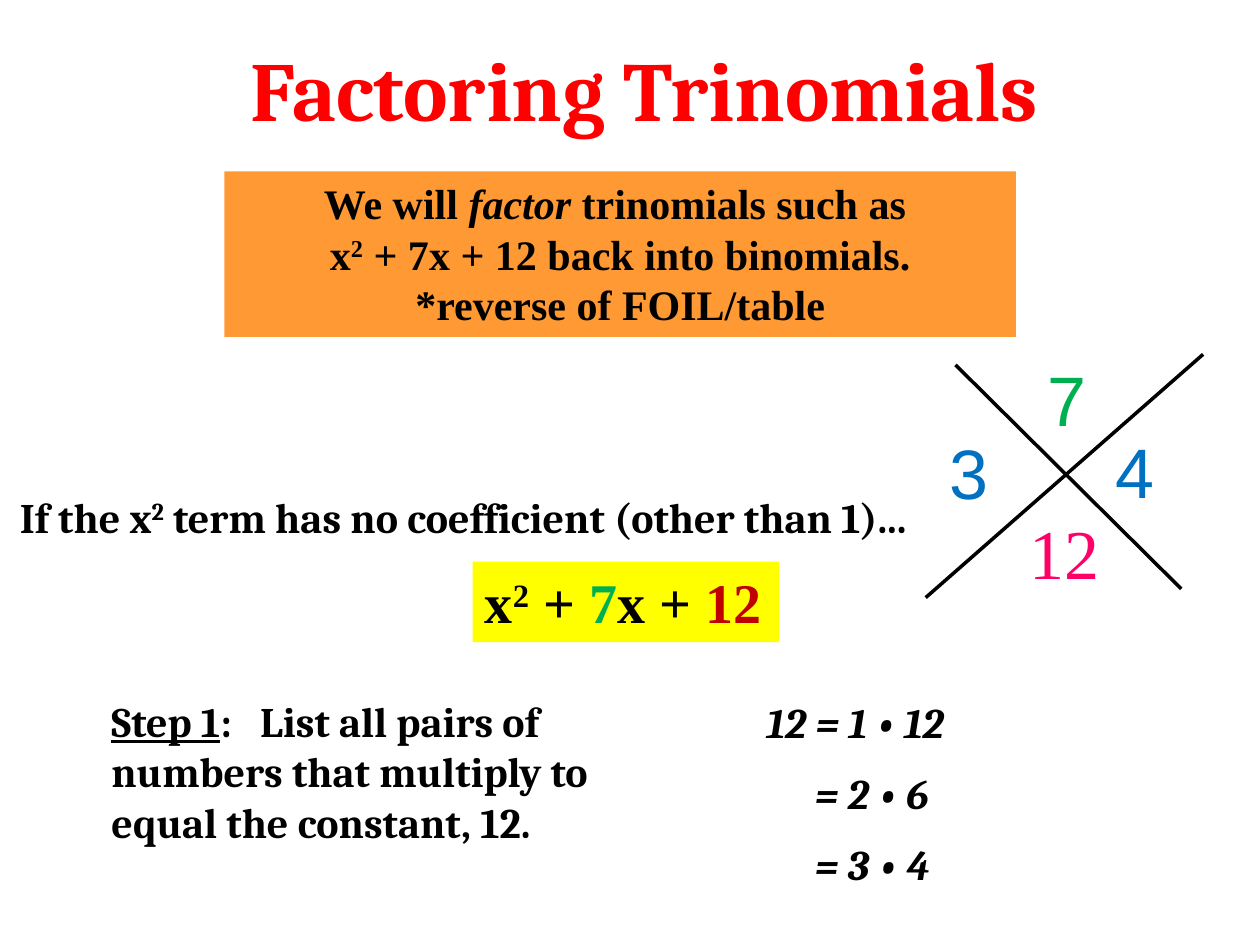
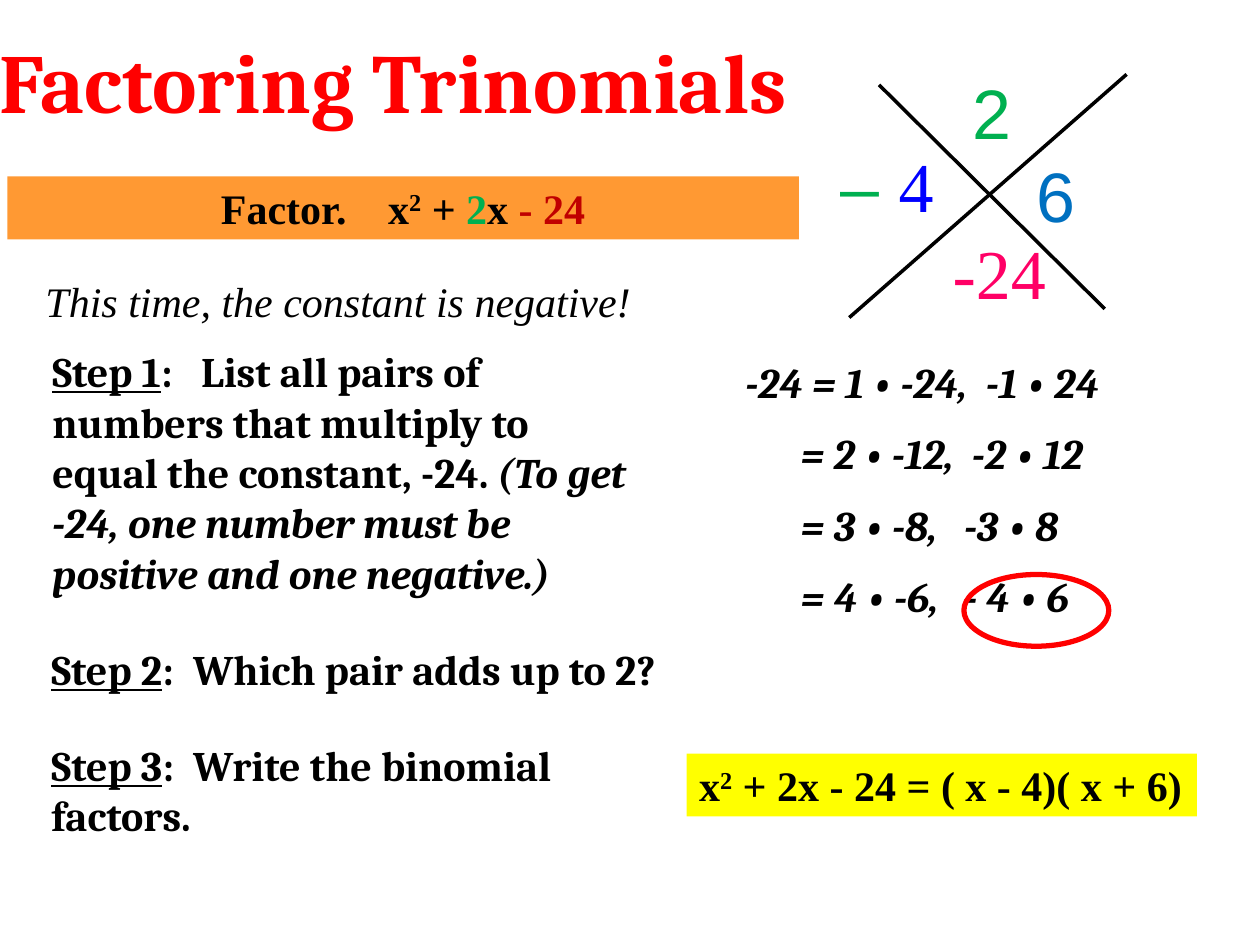
from lxml import etree
from pptx import Presentation
from pptx.dml.color import RGBColor
from pptx.enum.shapes import MSO_CONNECTOR, MSO_SHAPE
from pptx.enum.text import MSO_ANCHOR, MSO_AUTO_SIZE, PP_ALIGN
from pptx.oxml.ns import qn
from pptx.util import Pt

LINE = MSO_CONNECTOR.STRAIGHT
RECTANGLE = MSO_SHAPE.RECTANGLE
OVAL = MSO_SHAPE.OVAL
TOP = MSO_ANCHOR.TOP
NO_FIT = MSO_AUTO_SIZE.NONE
LEFT = PP_ALIGN.LEFT
CENTER = PP_ALIGN.CENTER

COLORS = {
    "black": "000000",
    "title": "FF0000",
    "banner": "FF9933",
    "highlight": "FFFF00",
    "sum": "00B050",
    "constant": "C00000",
    "product": "FF0066",
    "factor": "0070C0",
    "negative": "0000FF",
}
TITLE = {"name": "Cambria", "size": 48, "bold": True, "color": "title"}
BODY = {"name": "Cambria", "size": 24, "bold": True}
PAIRS = {**BODY, "italic": True}
MATH = {"name": "Times New Roman", "size": 24, "bold": True}
REMARK = {"name": "Times New Roman", "size": 24, "italic": True}
NUMBER = {"name": "Arial", "size": 40}
SQUARED = ("2", {"baseline": 30000})
PARAGRAPH_GAP = 12


def rgb(name):
    return RGBColor.from_string(COLORS[name])


def add_span(para, text, style):
    span = para.add_run()
    span.text = text
    for key, value in style.items():
        if key == "color":
            span.font.color.rgb = rgb(value)
        elif key == "baseline":
            span.font._element.set("baseline", str(value))
        else:
            setattr(span.font, key, Pt(value) if key == "size" else value)


def set_tabs(para, stops):
    tab_list = etree.SubElement(para._p.get_or_add_pPr(), qn("a:tabLst"))
    for stop in stops:
        etree.SubElement(tab_list, qn("a:tab"), pos=str(Pt(stop)), algn="l")


def write(shape, lines, style, align=LEFT, gap=0, wrap=True, inset=7.2):
    frame = shape.text_frame
    settings = {
        "word_wrap": wrap,
        "auto_size": NO_FIT,
        "vertical_anchor": TOP,
        "margin_left": Pt(inset),
        "margin_right": Pt(7.2),
        "margin_top": Pt(3.6),
        "margin_bottom": Pt(3.6),
    }
    for key, value in settings.items():
        setattr(frame, key, value)
    for index, (spans, stops) in enumerate(lines):
        para = frame.paragraphs[0] if index == 0 else frame.add_paragraph()
        para.alignment = align
        para.space_before = Pt(gap if index else 0)
        if stops:
            set_tabs(para, stops)
        for text, change in spans:
            add_span(para, text, {"color": "black", **style, **change})


def add_title(page, box):
    title = page.shapes.title
    for key, value in zip(("left", "top", "width", "height"), box):
        setattr(title, key, Pt(value))
    write(title, [([("Factoring Trinomials", {})], ())], TITLE, CENTER)


def add_text(page, box, lines, style, **options):
    write(page.shapes.add_textbox(*map(Pt, box)), lines, style, **options)


def add_panel(page, box, fill, lines, style, **options):
    panel = page.shapes.add_shape(RECTANGLE, *map(Pt, box))
    panel.shadow.inherit = False
    panel.fill.solid()
    panel.fill.fore_color.rgb = rgb(fill)
    panel.line.fill.background()
    write(panel, lines, style, **options)


def add_step(page, box, number, stop, *spans):
    label = (f"Step {number}", {"underline": True})
    lead = (":\t", {})
    add_text(page, box, [([label, lead, *spans], (stop,))], BODY)


def add_pairs(page, box, rows):
    lines = [([(text, {})], stops) for text, stops in rows]
    add_text(page, box, lines, PAIRS, gap=PARAGRAPH_GAP)


def add_cross(page, left, top, numbers):
    for x1, y1, x2, y2 in ((17, 6, 146, 134), (158.5, 0, 0, 139)):
        stroke = page.shapes.add_connector(
            LINE, Pt(left + x1), Pt(top + y1), Pt(left + x2), Pt(top + y2))
        stroke.line.color.rgb = rgb("black")
        stroke.line.width = Pt(2)
        etree.SubElement(stroke._element.spPr, qn("a:effectLst"))
    for x, y, spans in numbers:
        add_text(page, (left + x, top + y, 105, 60), [(spans, ())], NUMBER)


def add_ring(page, box):
    ring = page.shapes.add_shape(OVAL, *map(Pt, box))
    ring.shadow.inherit = False
    ring.fill.background()
    ring.line.color.rgb = rgb("title")
    ring.line.width = Pt(3)


def build_positive_constant(page):
    add_title(page, (16.5, 18, 703.5, 65.5))
    add_panel(page, (128.3, 98, 452.3, 94.5), "banner", [
        ([("We will ", {}), ("factor", {"italic": True}),
          (" trinomials such as ", {})], ()),
        ([("x", {}), SQUARED, (" + 7x + 12 back into binomials.", {})], ()),
        ([("*reverse of FOIL/table", {})], ()),
    ], MATH, align=CENTER)
    add_text(page, (4.3, 277.2, 522.7, 36), [
        ([("If the x", {}), SQUARED,
          (" term has no coefficient (other than 1)...", {})], ()),
    ], BODY)
    add_panel(page, (270, 321, 175.2, 46), "highlight", [
        ([("x", {}), SQUARED, (" + ", {}), ("7", {"color": "sum"}),
          ("x + ", {}), ("12", {"color": "constant"})], ()),
    ], {**MATH, "size": 32}, wrap=False)
    add_step(page, (56.6, 393.8, 322.6, 93.6), 1, 85,
             ("List all pairs of numbers that multiply to "
              "equal the constant, 12.", {}))
    add_pairs(page, (431, 394.3, 134, 122.4), [
        ("12 = 1 • 12", ()),
        ("\t= 2 • 6", (27.5,)),
        ("\t= 3 • 4", (27.5,)),
    ])
    add_cross(page, 529, 202.5, [
        (52, 85, [("12", {"name": "Times New Roman", "color": "product"})]),
        (62.6, -2.2, [("7", {"color": "sum"})]),
        (6.5, 39.6, [("3", {"color": "factor"})]),
        (101.5, 38.9, [("4", {"color": "factor"})]),
    ])


def build_negative_constant(page):
    add_title(page, (-29.5, 13.5, 508.3, 65))
    add_panel(page, (4.3, 100.8, 452.3, 36), "banner", [
        ([("Factor.\tx", {}), SQUARED, (" + ", {}), ("2", {"color": "sum"}),
          ("x ", {}), ("- 24", {"color": "constant"})], (95.5,)),
    ], MATH, inset=122)
    add_text(page, (-6.5, 154, 399.6, 36), [
        ([("This time, the constant is negative!", {})], ()),
    ], REMARK, align=CENTER)
    add_step(page, (22.8, 194, 342, 151.2), 1, 85,
             ("List all pairs of numbers that multiply to "
              "equal the constant, -24. ", {}),
             ("(To get -24, one number must be positive and one negative.)",
              {"italic": True}))
    add_pairs(page, (419, 200.2, 280, 165.6), [
        ("-24 = 1 • -24,\t-1 • 24", (137.5,)),
        ("\t= 2 • -12,\t-2 • 12", (31.5, 129.5)),
        ("\t= 3 • -8,\t-3 • 8", (31.5, 125)),
        ("\t= 4 • -6,\t- 4 • 6", (31.5, 125)),
    ])
    add_step(page, (22.3, 364.3, 365, 36), 2, 81,
             ("Which pair adds up to 2?", {}))
    add_ring(page, (550.8, 328.3, 82.8, 41))
    add_step(page, (22.3, 419, 366.5, 65), 3, 81,
             ("Write the binomial factors.", {}))
    add_panel(page, (392.4, 430.6, 291.6, 36), "highlight", [
        ([("x", {}), SQUARED, (" + 2x - 24 = ( x - 4)( x + 6)", {})], ()),
    ], MATH, wrap=False)
    add_cross(page, 485.3, 42.5, [
        (52, 85, [("-24", {"name": "Times New Roman", "color": "product"})]),
        (63.4, -6.5, [("2", {"color": "sum"})]),
        (-12.2, 35.3, [("– ", {"color": "sum"}),
                       ("4", {"name": "Times New Roman",
                              "color": "negative"})]),
        (100.1, 41, [("6", {"color": "factor"})]),
    ])


def main():
    deck = Presentation()
    deck.slide_width, deck.slide_height = Pt(720), Pt(540)
    for build in (build_positive_constant, build_negative_constant):
        build(deck.slides.add_slide(deck.slide_layouts[5]))
    deck.save("out.pptx")


if __name__ == "__main__":
    main()
